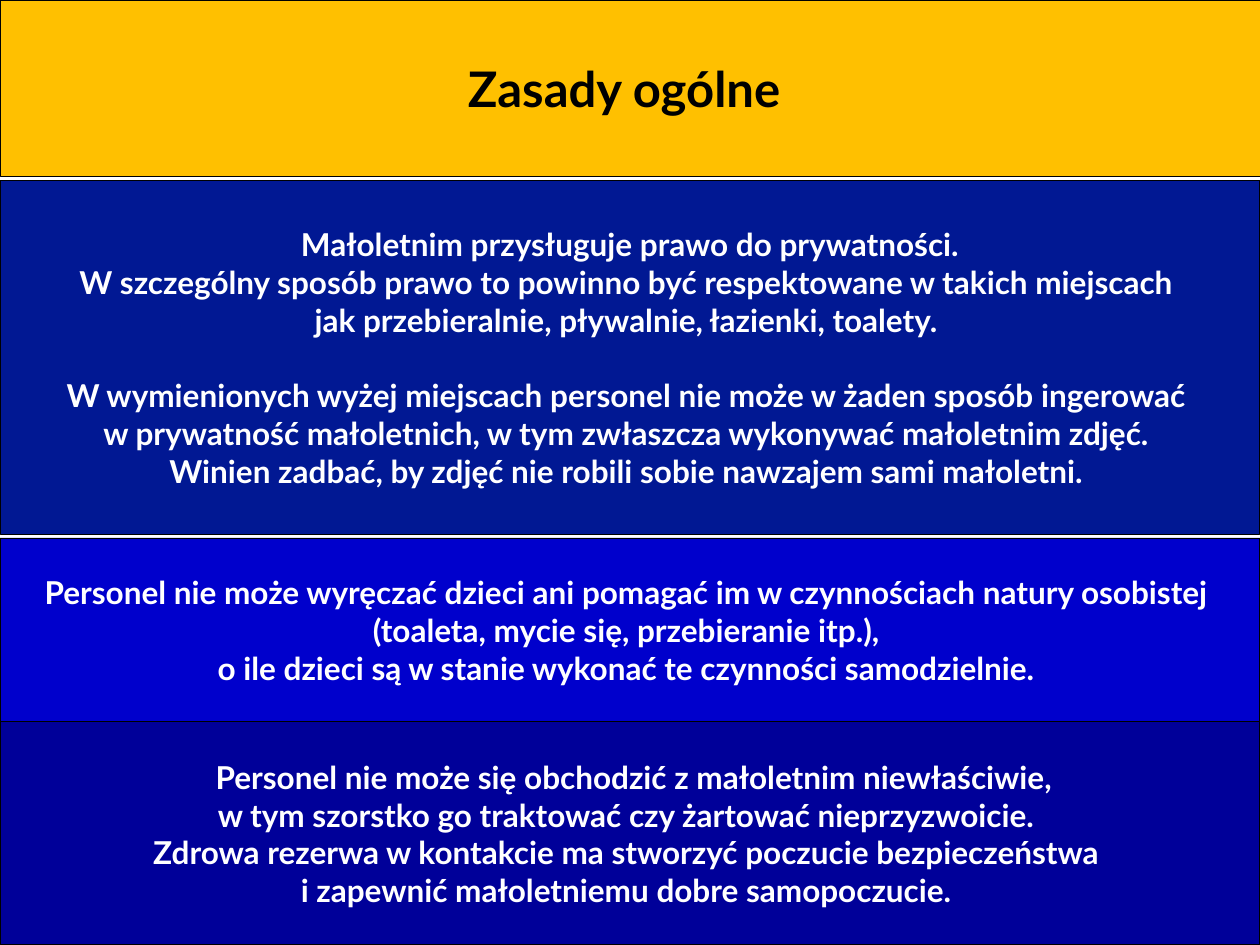
from dataclasses import dataclass

from pptx import Presentation
from pptx.dml.color import RGBColor
from pptx.enum.shapes import MSO_SHAPE
from pptx.enum.text import MSO_ANCHOR, MSO_AUTO_SIZE, PP_ALIGN
from pptx.util import Inches, Pt

RECT = MSO_SHAPE.RECTANGLE
MIDDLE = MSO_ANCHOR.MIDDLE
CENTER = PP_ALIGN.CENTER
NO_AUTOFIT = MSO_AUTO_SIZE.NONE
FONT = "Lato"
WIDTH = 10


@dataclass
class Band:
    top: float
    height: float
    fill: str
    paragraphs: tuple[str, ...]
    gap: float = 0


TITLE = Band(0, 1.4, "FFC000", ("Zasady ogólne ",))
RULES = [
    Band(1.43, 2.81, "011893", (
        "Małoletnim przysługuje prawo do prywatności.\n"
        "W szczególny sposób prawo to powinno być respektowane w takich miejscach \n"
        "jak przebieralnie, pływalnie, łazienki, toalety. ",
        "W wymienionych wyżej miejscach personel nie może w żaden sposób ingerować \n"
        "w prywatność małoletnich, w tym zwłaszcza wykonywać małoletnim zdjęć. \n"
        "Winien zadbać, by zdjęć nie robili sobie nawzajem sami małoletni. ",
    ), gap=21.6),
    Band(4.27, 1.46, "0000CC", (
        "Personel nie może wyręczać dzieci ani pomagać im w czynnościach natury osobistej \n"
        "(toaleta, mycie się, przebieranie itp.), \n"
        "o ile dzieci są w stanie wykonać te czynności samodzielnie. ",
    )),
    Band(5.73, 1.77, "000099", (
        " Personel nie może się obchodzić z małoletnim niewłaściwie,\n"
        "w tym szorstko go traktować czy żartować nieprzyzwoicie. ",
        "Zdrowa rezerwa w kontakcie ma stworzyć poczucie bezpieczeństwa \n"
        "i zapewnić małoletniemu dobre samopoczucie. ",
    )),
]


def rgb(color: str) -> RGBColor:
    return RGBColor.from_string(color)


def write(tf, paragraphs: tuple[str, ...], *, size: float, color: str, gap: float = 0) -> None:
    tf.word_wrap = True
    tf.auto_size = NO_AUTOFIT
    tf.vertical_anchor = MIDDLE
    for i, text in enumerate(paragraphs):
        p = tf.add_paragraph() if i else tf.paragraphs[0]
        p.text = text
        p.alignment = CENTER
        p.space_before = Pt(gap if i else 0)
        for r in p.runs:
            r.font.name = FONT
            r.font.size = Pt(size)
            r.font.bold = True
            r.font.color.rgb = rgb(color)


def style_band(sp, band: Band) -> None:
    sp.left, sp.top = Inches(0), Inches(band.top)
    sp.width, sp.height = Inches(WIDTH), Inches(band.height)
    sp.fill.solid()
    sp.fill.fore_color.rgb = rgb(band.fill)
    sp.line.color.rgb = rgb("000000")
    sp.line.width = Pt(0.5)


def add_rule(s, band: Band) -> None:
    sp = s.shapes.add_shape(RECT, 0, 0, 0, 0)
    sp.shadow.inherit = False
    style_band(sp, band)
    write(sp.text_frame, band.paragraphs, size=18, color="FFFFFF", gap=band.gap)


def main() -> None:
    prs = Presentation()
    prs.slide_width, prs.slide_height = Inches(WIDTH), Inches(7.5)
    s = prs.slides.add_slide(prs.slide_layouts[5])
    title = s.shapes.title
    style_band(title, TITLE)
    write(title.text_frame, TITLE.paragraphs, size=28, color="000000")
    for band in RULES:
        add_rule(s, band)
    prs.save("out.pptx")


if __name__ == "__main__":
    main()
